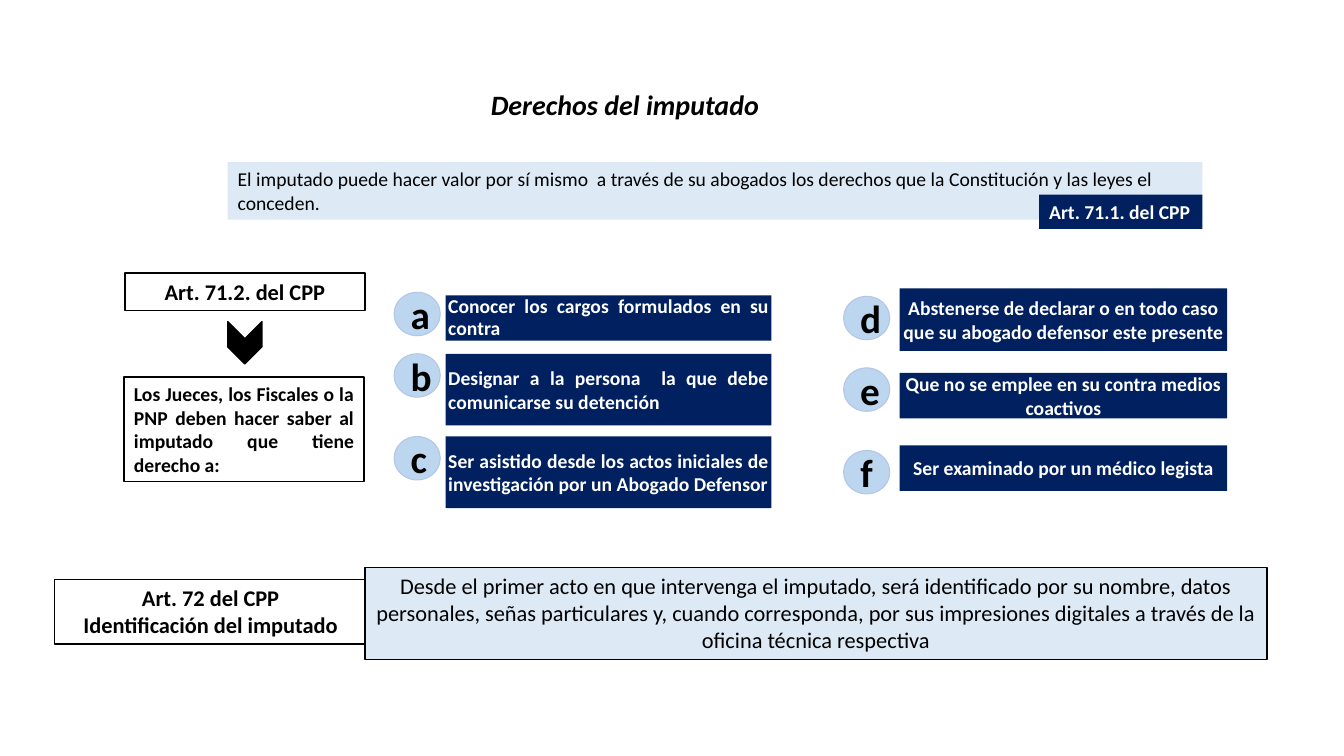
from pptx import Presentation
from pptx.dml.color import RGBColor
from pptx.enum.shapes import MSO_SHAPE
from pptx.enum.text import MSO_ANCHOR, MSO_AUTO_SIZE, PP_ALIGN
from pptx.util import Pt

RECTANGLE, OVAL, CHEVRON = MSO_SHAPE.RECTANGLE, MSO_SHAPE.OVAL, MSO_SHAPE.CHEVRON
LEFT, CENTER, JUSTIFY = PP_ALIGN.LEFT, PP_ALIGN.CENTER, PP_ALIGN.JUSTIFY
TOP, MIDDLE = MSO_ANCHOR.TOP, MSO_ANCHOR.MIDDLE
NO_AUTOFIT = MSO_AUTO_SIZE.NONE
TITLE_ONLY = 5

FONT = "Calibri"
BLACK, WHITE, NAVY = "000000", "FFFFFF", "002060"
PALE_BLUE, CIRCLE_BLUE, CIRCLE_EDGE = "DDEAF6", "BBD6EE", "B3C6E7"
WIDE_INSETS, TIGHT_INSETS = (7.2, 3.6), (1.8, 1.44)

LEFT_RIGHTS = [
    ("a", 208.8, 211, 32.4, 0.9, "Conocer los cargos formulados en su contra"),
    ("b", 252.7, 252.7, 51.2, None,
     "Designar a la persona  la que debe comunicarse su detención"),
    ("c", 311.8, 311.8, 51.2, None,
     "Ser asistido desde los actos iniciales de investigación por un Abogado Defensor"),
]
RIGHT_RIGHTS = [
    ("d", 211.7, 206, 44.6, None,
     "Abstenerse de declarar o en todo caso que su abogado defensor este presente"),
    ("e", 262.8, 266.4, 32.4, None, "Que no se emplee en su contra medios coactivos"),
    ("f", 321.8, 318.2, 32.4, None, "Ser examinado por un médico legista"),
]


def color(value):
    """Turn a hex string into a colour."""
    return RGBColor.from_string(value)


def write(shape, text, size, ink=BLACK, bold=True, italic=False, align=CENTER,
          anchor=TOP, insets=WIDE_INSETS, spacing=None):
    """Put formatted text into a shape."""
    frame = shape.text_frame
    frame.word_wrap = True
    frame.auto_size = NO_AUTOFIT
    frame.vertical_anchor = anchor
    frame.margin_left = frame.margin_right = Pt(insets[0])
    frame.margin_top = frame.margin_bottom = Pt(insets[1])
    frame.text = text
    for paragraph in frame.paragraphs:
        paragraph.alignment = align
        paragraph.line_spacing = spacing
        for run in paragraph.runs:
            run.font.name = FONT
            run.font.size = Pt(size)
            run.font.bold = bold
            run.font.italic = italic
            run.font.color.rgb = color(ink)


def add_figure(slide, kind, box, fill, edge=None, edge_width=1):
    """Add a filled preset shape, outlined if an edge colour is given."""
    figure = slide.shapes.add_shape(kind, *(Pt(length) for length in box))
    figure.shadow.inherit = False
    figure.fill.solid()
    figure.fill.fore_color.rgb = color(fill)
    if edge:
        figure.line.color.rgb = color(edge)
        figure.line.width = Pt(edge_width)
    else:
        figure.line.fill.background()
    return figure


def add_panel(slide, box, text, size, fill=WHITE, edge=BLACK, **style):
    """Add a rectangle with text."""
    write(add_figure(slide, RECTANGLE, box, fill, edge), text, size, **style)


def add_rights(slide, rights, circle_left, panel_left, panel_width, align):
    """Add a column of lettered rights."""
    for letter, circle_top, panel_top, height, spacing, text in rights:
        add_panel(slide, (panel_left, panel_top, panel_width, height), text, 14, NAVY,
                  None, ink=WHITE, align=align, anchor=MIDDLE, insets=TIGHT_INSETS,
                  spacing=spacing)
        circle = add_figure(slide, OVAL, (circle_left, circle_top, 33, 31),
                            CIRCLE_BLUE, CIRCLE_EDGE, 0.75)
        write(circle, letter, 28, anchor=MIDDLE)


def add_title(slide, text):
    """Place and format the slide title."""
    title = slide.shapes.title
    title.left, title.top, title.width, title.height = Pt(343.4), Pt(59), Pt(212), Pt(32)
    write(title, text, 20, italic=True, align=LEFT)


def main():
    """Build and save the slide."""
    deck = Presentation()
    deck.slide_width, deck.slide_height = Pt(960), Pt(540)
    slide = deck.slides.add_slide(deck.slide_layouts[TITLE_ONLY])

    add_title(slide, "Derechos del imputado")
    add_panel(slide, (162.7, 115.9, 696.2, 41),
              "El imputado puede hacer valor por sí mismo  a través de su abogados "
              "los derechos que la Constitución y las leyes el conceden.",
              14, PALE_BLUE, None, bold=False, align=LEFT)
    add_panel(slide, (742.3, 139, 116.6, 24.5), "Art. 71.1. del CPP", 14, NAVY, None,
              ink=WHITE, align=LEFT)

    add_panel(slide, (89.3, 195.1, 171.4, 26.6), "Art. 71.2. del CPP", 16)
    arrow = add_figure(slide, CHEVRON, (159.8, 232.6, 30.2, 24.5), BLACK, BLACK)
    arrow.rotation = 90
    add_panel(slide, (88.6, 269.3, 171.4, 74.9),
              "Los Jueces, los Fiscales o la PNP deben hacer saber al imputado "
              "que tiene derecho a:", 14, align=JUSTIFY)

    add_rights(slide, LEFT_RIGHTS, 281.5, 318.4, 232.6, JUSTIFY)
    add_rights(slide, RIGHT_RIGHTS, 602.6, 642.6, 234, CENTER)

    add_panel(slide, (38.9, 414, 223.2, 46.1),
              "Art. 72 del CPP\nIdentificación del imputado", 16)
    add_panel(slide, (260.6, 405.4, 644.4, 65.5),
              "Desde el primer acto en que intervenga el imputado, será identificado "
              "por su nombre, datos personales, señas particulares y, cuando corresponda, "
              "por sus impresiones digitales a través de la oficina técnica respectiva",
              16, PALE_BLUE, bold=False)
    deck.save("out.pptx")


if __name__ == "__main__":
    main()
